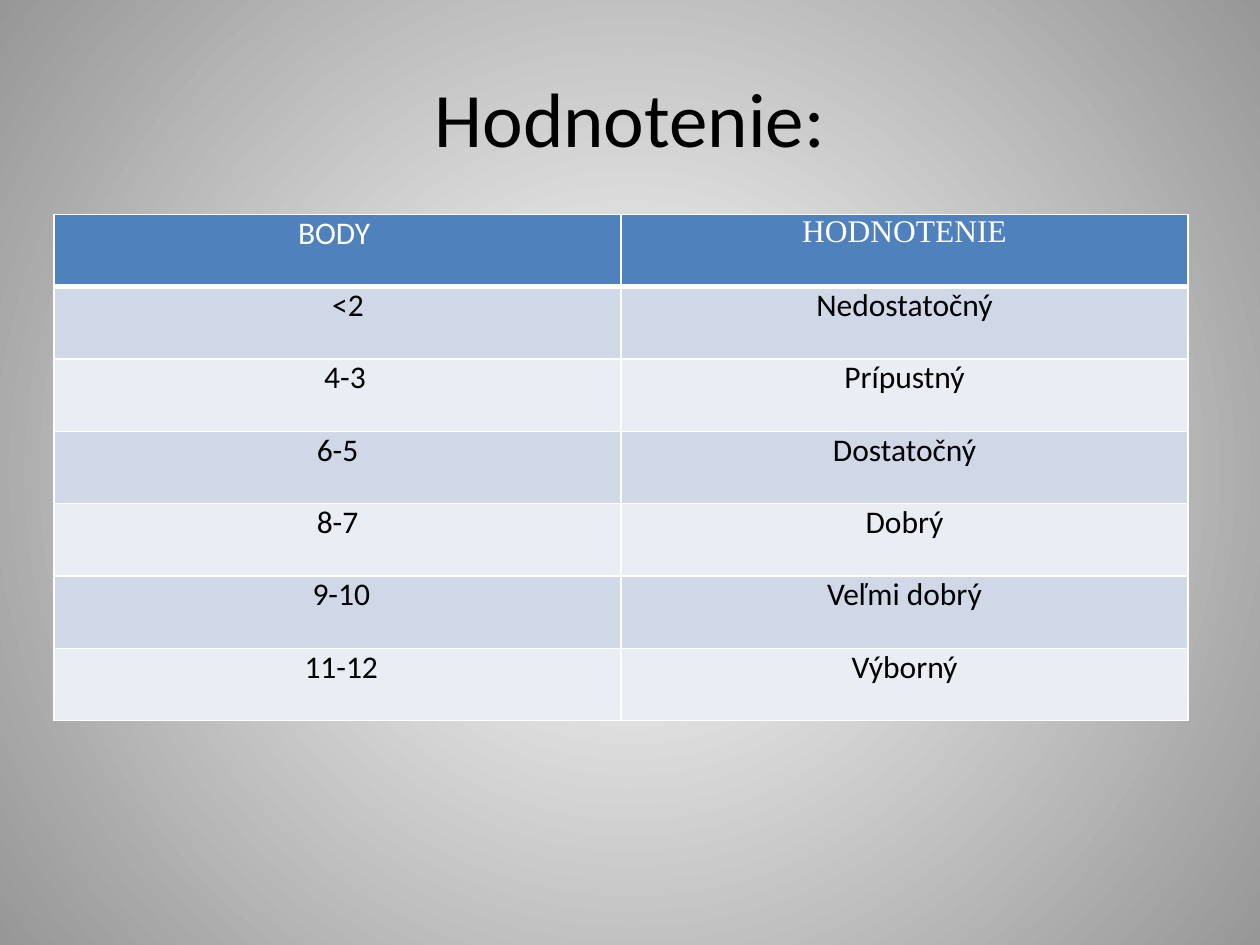
from lxml import etree
from pptx import Presentation
from pptx import util as u
from pptx.dml import color
from pptx.enum import text
from pptx.oxml import ns

COLORS = {
    "white": "FFFFFF",
    "black": "000000",
    "edge": "979797",
    "header": "4F81BD",
    "odd": "D0D8E8",
    "even": "E9EDF4",
}

# Each row: points, grade, extra left margin of the points cell in cm
ROWS = [
    ("BODY", "HODNOTENIE", 0),
    ("<2", "Nedostatočný", 0.42),
    ("4-3", "Prípustný", 0.3),
    ("6-5", "Dostatočný", 0),
    ("8-7", "Dobrý", 0),
    ("9-10", "Veľmi dobrý", 0.15),
    ("11-12", "Výborný", 0.15),
]
MARGIN = 0.18


def add_run(paragraph, words, size, font, color_name):
    paragraph.alignment = text.PP_ALIGN.CENTER
    run = paragraph.add_run()
    run.text = words
    run.font.size = u.Pt(size)
    run.font.name = font
    run.font.color.rgb = color.RGBColor.from_string(COLORS[color_name])


def add_borders(cell, bottom_width):
    properties = cell._tc.get_or_add_tcPr()
    for side, width in (("L", 1), ("R", 1), ("T", 1), ("B", bottom_width)):
        line = etree.SubElement(properties, ns.qn(f"a:ln{side}"), w=str(u.Pt(width)))
        fill = etree.SubElement(line, ns.qn("a:solidFill"))
        etree.SubElement(fill, ns.qn("a:srgbClr"), val=COLORS["white"])


presentation = Presentation()
presentation.slide_width = u.Cm(25.4)
presentation.slide_height = u.Cm(19.05)
slide = presentation.slides.add_slide(presentation.slide_layouts[6])

# Background: circular gradient from the centre
background = slide.background.fill
background.gradient()
for stop, name in zip(background.gradient_stops, ("white", "edge")):
    stop.color.rgb = color.RGBColor.from_string(COLORS[name])
gradient = slide.element.find(".//" + ns.qn("a:gradFill"))
gradient.remove(gradient.find(ns.qn("a:lin")))
circle = etree.SubElement(gradient, ns.qn("a:path"), path="circle")
etree.SubElement(circle, ns.qn("a:fillToRect"), {side: "50000" for side in "ltrb"})

# Title
title = slide.shapes.add_textbox(u.Cm(1.27), u.Cm(0.76), u.Cm(22.86), u.Cm(3.18))
title.text_frame.word_wrap = True
title.text_frame.vertical_anchor = text.MSO_ANCHOR.MIDDLE
add_run(title.text_frame.paragraphs[0], "Hodnotenie:", 44, "Calibri", "black")

# Grading table
table = slide.shapes.add_table(
    len(ROWS), 2, u.Cm(1.09), u.Cm(4.32), u.Cm(22.86), u.Cm(10.21)
).table
for row_index, (points, grade, indent) in enumerate(ROWS):
    is_header = row_index == 0
    fill_name = "header" if is_header else "odd" if row_index % 2 else "even"
    for column_index, words in enumerate((points, grade)):
        cell = table.cell(row_index, column_index)
        cell.margin_left = cell.margin_right = u.Cm(MARGIN)
        cell.margin_top = cell.margin_bottom = 0
        add_borders(cell, 3 if is_header else 1)
        cell.fill.solid()
        cell.fill.fore_color.rgb = color.RGBColor.from_string(COLORS[fill_name])
        font = "Times New Roman" if is_header and column_index else "Calibri"
        add_run(cell.text_frame.paragraphs[0], words, 18, font,
                "white" if is_header else "black")
    table.cell(row_index, 0).margin_left = u.Cm(MARGIN + indent)
table.cell(0, 0).margin_right = u.Cm(MARGIN + 0.14)

presentation.save("out.pptx")
